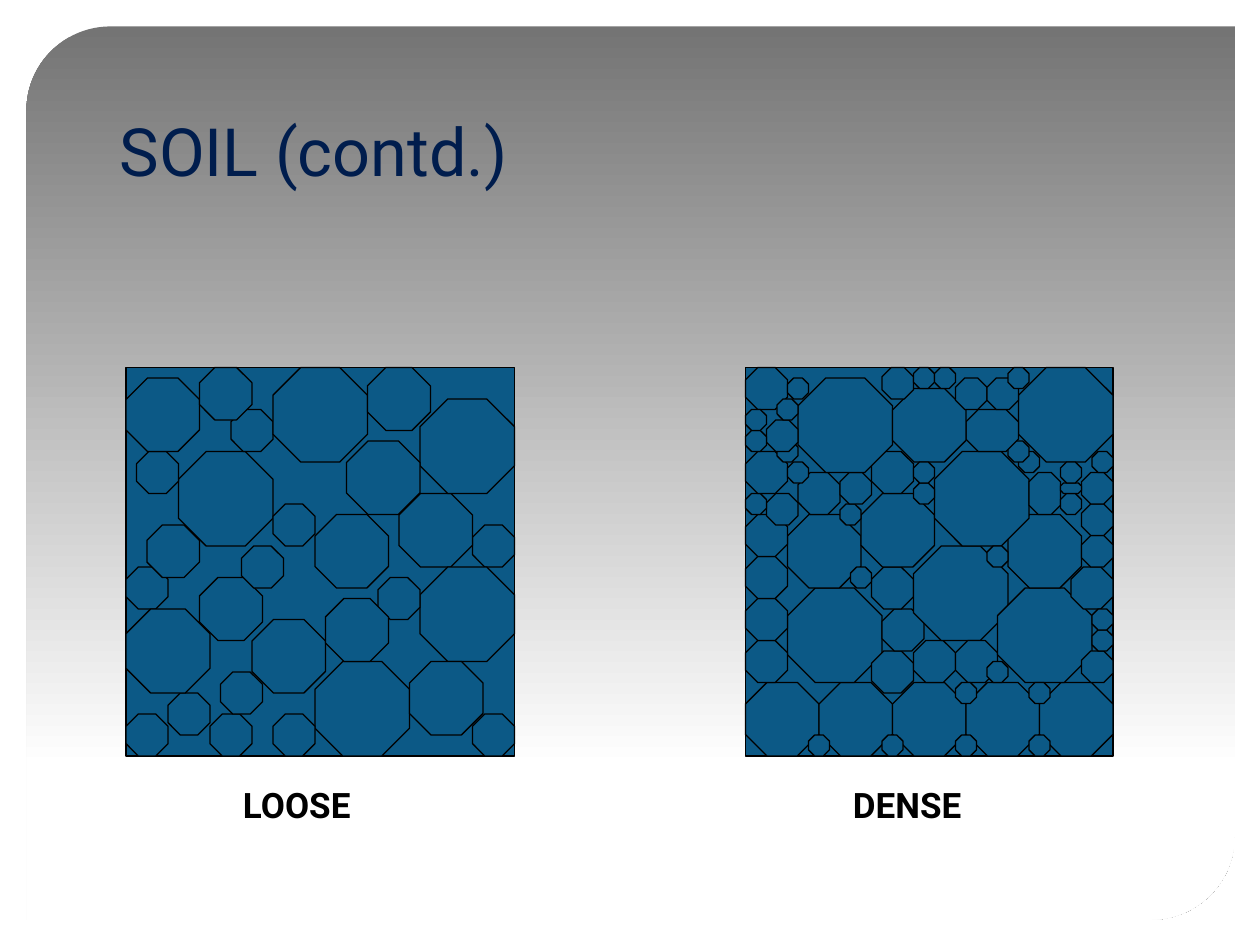
from pptx import Presentation
from pptx.dml.color import RGBColor
from pptx.enum import shapes, text
from pptx.util import Inches, Pt

NAVY = RGBColor(0x00, 0x1D, 0x4D)
SOIL_BLUE = RGBColor(0x0C, 0x59, 0x86)
BLACK = RGBColor(0x00, 0x00, 0x00)
GRAY = RGBColor(0x74, 0x74, 0x74)
WHITE = RGBColor(0xFF, 0xFF, 0xFF)
UNIT = Inches(1) / 12
TOP = 35
SIDE = 37

LOOSE_GRAINS = [
    (0, 33, 4), (4, 31, 4), (8, 33, 4), (9, 29, 4), (0, 19, 4), (33, 15, 4),
    (33, 33, 4), (26, 12, 7), (12, 24, 7), (18, 14, 7), (5, 8, 9), (14, 13, 4),
    (18, 28, 9), (10, 4, 4), (28, 3, 9), (28, 19, 9), (27, 28, 7), (7, 20, 6),
    (24, 20, 4), (19, 22, 6), (0, 23, 8), (14, 33, 4), (11, 17, 4), (1, 8, 4),
    (0, 1, 7), (14, 0, 9), (21, 7, 7), (23, 0, 6), (2, 15, 5), (7, 0, 5),
]
DENSE_GRAINS = [
    (0, 30, 7), (7, 30, 7), (4, 21, 9), (0, 26, 4), (0, 22, 4), (0, 18, 4),
    (14, 30, 7), (12, 27, 4), (21, 30, 7), (28, 30, 7), (4, 14, 7), (0, 14, 4),
    (16, 26, 4), (13, 23, 4), (12, 19, 4), (11, 12, 7), (16, 17, 9), (20, 26, 4),
    (24, 21, 9), (32, 27, 3), (33, 25, 2), (31, 19, 4), (25, 14, 7), (18, 8, 9),
    (32, 16, 3), (32, 13, 3), (27, 10, 3, 4), (33, 23, 2), (30, 12, 2), (16, 11, 2),
    (9, 13, 2), (2, 12, 3), (0, 12, 2), (0, 8, 4), (5, 10, 4), (4, 9, 2),
    (32, 10, 3), (30, 11, 2, 1), (9, 10, 3), (12, 8, 4), (5, 1, 9), (3, 7, 2),
    (2, 5, 3), (0, 6, 2), (26, 0, 9), (0, 0, 4), (0, 4, 2), (3, 3, 2),
    (23, 17, 2), (30, 9, 2), (33, 8, 2), (26, 8, 2), (25, 7, 2), (21, 4, 5, 4),
    (14, 2, 7), (16, 9, 2), (4, 1, 2), (13, 0, 3), (16, 0, 2), (20, 30, 2),
    (27, 35, 2), (20, 35, 2), (13, 35, 2), (6, 35, 2), (20, 1, 3), (23, 1, 3),
    (25, 0, 2), (18, 0, 2), (27, 30, 2), (23, 28, 2), (10, 19, 2),
]


def write(box, words, size, color, bold=False, anchor=text.MSO_ANCHOR.TOP):
    frame = box.text_frame
    frame.word_wrap = True
    frame.vertical_anchor = anchor
    para = frame.paragraphs[0]
    para.alignment = text.PP_ALIGN.LEFT
    span = para.add_run()
    span.text = words
    span.font.name = "Roboto"
    span.font.size = Pt(size)
    span.font.bold = bold
    span.font.color.rgb = color


def add_soil(kind, left, top, width, height):
    shape = slide.shapes.add_shape(
        kind, *(round(n * UNIT) for n in (left, top, width, height)))
    shape.shadow.inherit = False
    shape.fill.solid()
    shape.fill.fore_color.rgb = SOIL_BLUE
    shape.line.color.rgb = BLACK
    shape.line.width = Pt(0.75)
    return shape


deck = Presentation()
deck.slide_width = Inches(10)
deck.slide_height = Inches(7.5)
slide = deck.slides.add_slide(deck.slide_layouts[5])

panel = slide.shapes.add_shape(
    shapes.MSO_SHAPE.ROUND_2_DIAG_RECTANGLE,
    Inches(0.21), Inches(0.21), Inches(9.59), Inches(7.09))
panel.adjustments[0] = 0.094
panel.adjustments[1] = 0
panel.shadow.inherit = False
panel.line.fill.background()
panel.fill.gradient()
panel.fill.gradient_angle = 270
for stop, position, color in zip(panel.fill.gradient_stops, (0, 0.83), (GRAY, WHITE)):
    stop.position = position
    stop.color.rgb = color
slide.shapes._spTree.insert(2, panel._element)

title = slide.shapes.title
title.left, title.top = Inches(0.85), Inches(0.42)
title.width, title.height = Inches(8.29), Inches(1.14)
write(title, "SOIL (contd.)", 38, NAVY, anchor=text.MSO_ANCHOR.BOTTOM)

samples = [
    ("LOOSE", 12, SIDE, LOOSE_GRAINS, 1.83, 2.25),
    ("DENSE", 71, 35, DENSE_GRAINS, 6.67, 2.08),
]
for name, left, width, grains, label_left, label_width in samples:
    add_soil(shapes.MSO_SHAPE.RECTANGLE, left, TOP, width, SIDE)
    for column, row, size, *height in grains:
        grain = add_soil(shapes.MSO_SHAPE.OCTAGON, left + column, TOP + row,
                         size, height[0] if height else size)
        grain.adjustments[0] = 0.293
    label = slide.shapes.add_textbox(
        Inches(label_left), Inches(6.17), Inches(label_width), Inches(0.43))
    write(label, name, 20, BLACK, bold=True)

deck.save("out.pptx")
